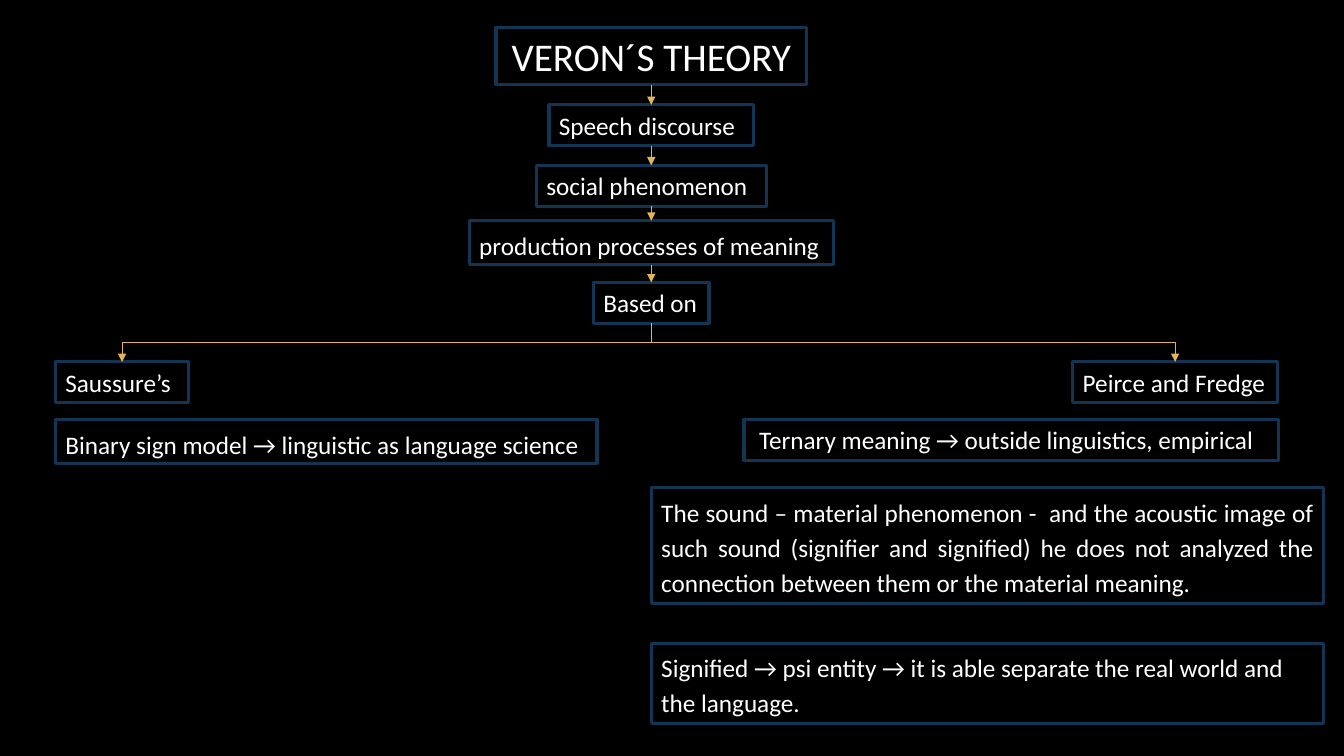
from dataclasses import dataclass
from itertools import pairwise

from lxml.etree import SubElement
from pptx import Presentation
from pptx.dml.color import RGBColor
from pptx.enum.shapes import MSO_CONNECTOR
from pptx.enum.text import MSO_ANCHOR, MSO_AUTO_SIZE, PP_ALIGN
from pptx.oxml.ns import qn
from pptx.util import Inches, Pt

WIDTH, HEIGHT = Inches(13.33), Inches(7.5)
AXIS = 48.46
BLACK, WHITE, NAVY, GOLD = "000000", "FFFFFF", "113553", "E5B458"


@dataclass(frozen=True)
class Box:
    """A framed text; lengths are percentages of the slide's size."""
    text: str
    left: float
    top: float
    width: float
    height: float = 5.4
    size: int = 18
    align: PP_ALIGN = PP_ALIGN.LEFT
    spacing: float = 1.0
    inset: float = 0.1
    right_inset: float = 0

    @property
    def middle(self) -> float:
        return self.left + self.width / 2

    @property
    def bottom(self) -> float:
        return self.top + self.height


def centred(text: str, top: float, width: float, **extra) -> Box:
    """Return a box centred on the main axis."""
    return Box(text, AXIS - width / 2, top, width, **extra)


CHAIN = [
    centred("VERON´S THEORY", 3.6, 23.11, height=7.6, size=28,
            align=PP_ALIGN.CENTER, right_inset=0.1),
    centred("Speech discourse", 13.87, 15.23),
    centred("social phenomenon", 21.87, 17.1),
    centred("production processes of meaning", 29.2, 27.08, height=5.8, spacing=1.15),
    centred("Based on", 37.35, 8.6),
]
BRANCHES = [
    Box("Saussure’s", 4.13, 47.87, 9.9),
    Box("Peirce and Fredge", 79.82, 47.87, 15.23),
]
DETAILS = [
    Box("Binary sign model → linguistic as language science",
        4.13, 55.47, 40.29, 5.8, spacing=1.15),
    Box("Ternary meaning → outside linguistics, empirical",
        55.36, 55.47, 39.76, inset=0.15),
    Box("The sound – material phenomenon -  and the acoustic image of such sound "
        "(signifier and signified) he does not analyzed the connection between them "
        "or the material meaning.",
        AXIS, 64.53, 50.04, 15.33, align=PP_ALIGN.JUSTIFY, spacing=1.15, right_inset=0.1),
    Box("Signified → psi entity → it is able separate the real world and the language.",
        AXIS, 85.07, 50.04, 10.67, spacing=1.15, right_inset=0.1),
]


def rgb(value: str) -> RGBColor:
    """Turn a hex string into a colour."""
    return RGBColor.from_string(value)


def px(share: float) -> int:
    """Convert a percentage of the slide width."""
    return round(WIDTH * share / 100)


def py(share: float) -> int:
    """Convert a percentage of the slide height."""
    return round(HEIGHT * share / 100)


def apply(target, values: dict) -> None:
    """Set every attribute named in the dict."""
    for name, value in values.items():
        setattr(target, name, value)


def draw_box(sp, box: Box) -> None:
    """Place, frame and fill one text shape."""
    apply(sp, {"left": px(box.left), "top": py(box.top),
               "width": px(box.width), "height": py(box.height)})
    sp.line.color.rgb = rgb(NAVY)
    sp.line.width = Pt(2.25)
    tf = sp.text_frame
    apply(tf, {"word_wrap": True, "auto_size": MSO_AUTO_SIZE.NONE,
               "vertical_anchor": MSO_ANCHOR.TOP,
               "margin_left": Inches(box.inset), "margin_right": Inches(box.right_inset),
               "margin_top": Inches(0.05), "margin_bottom": Inches(0.05)})
    p = tf.paragraphs[0]
    apply(p, {"alignment": box.align, "line_spacing": box.spacing})
    r = p.add_run()
    r.text = box.text
    apply(r.font, {"name": "Calibri", "size": Pt(box.size)})
    r.font.color.rgb = rgb(WHITE)


def draw_arrow(s, kind: MSO_CONNECTOR, x1: int, y1: int, x2: int, y2: int,
               turn: int = 0) -> None:
    """Draw a gold arrow, turned clockwise by whole degrees."""
    c = s.shapes.add_connector(kind, x1, y1, x2, y2)
    c.line.color.rgb = rgb(GOLD)
    c.line.width = Pt(0.75)
    SubElement(c.line._get_or_add_ln(), qn("a:tailEnd"), type="triangle")
    props = c._element.spPr
    SubElement(props, qn("a:effectLst"))
    if turn:
        props.find(qn("a:xfrm")).set("rot", str(turn * 60000))


def draw_branch(s, root: Box, leaf: Box) -> None:
    """Draw a bent arrow that leaves downwards and ends downwards."""
    x1, y1, x2, y2 = px(root.middle), py(root.bottom), px(leaf.middle), py(leaf.top)
    mid_x, mid_y = (x1 + x2) // 2, (y1 + y2) // 2
    half_x, half_y = abs(x2 - x1) // 2, (y2 - y1) // 2
    side, turn = (1, 90) if x2 < x1 else (-1, 270)
    draw_arrow(s, MSO_CONNECTOR.ELBOW, mid_x - side * half_y, mid_y - half_x,
               mid_x + side * half_y, mid_y + half_x, turn)


def main() -> None:
    """Build the slide and save it."""
    prs = Presentation()
    apply(prs, {"slide_width": WIDTH, "slide_height": HEIGHT})
    s = prs.slides.add_slide(prs.slide_layouts[5])
    s.background.fill.solid()
    s.background.fill.fore_color.rgb = rgb(BLACK)
    draw_box(s.shapes.title, CHAIN[0])
    for box in CHAIN[1:] + BRANCHES + DETAILS:
        draw_box(s.shapes.add_textbox(0, 0, 0, 0), box)
    for leaf in BRANCHES:
        draw_branch(s, CHAIN[-1], leaf)
    for upper, lower in pairwise(CHAIN):
        draw_arrow(s, MSO_CONNECTOR.STRAIGHT, px(AXIS), py(upper.bottom),
                   px(AXIS), py(lower.top))
    prs.save("out.pptx")


if __name__ == "__main__":
    main()
